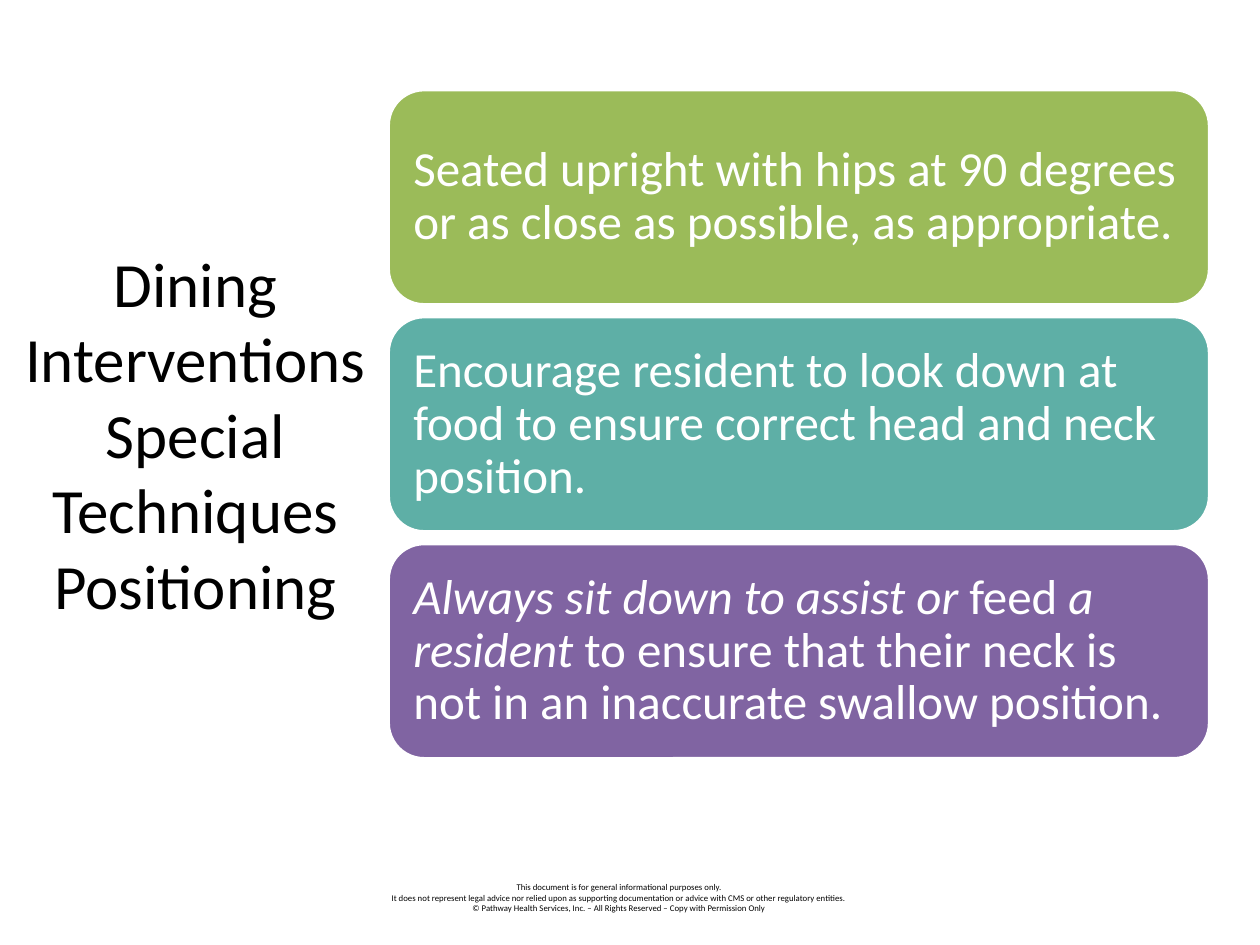
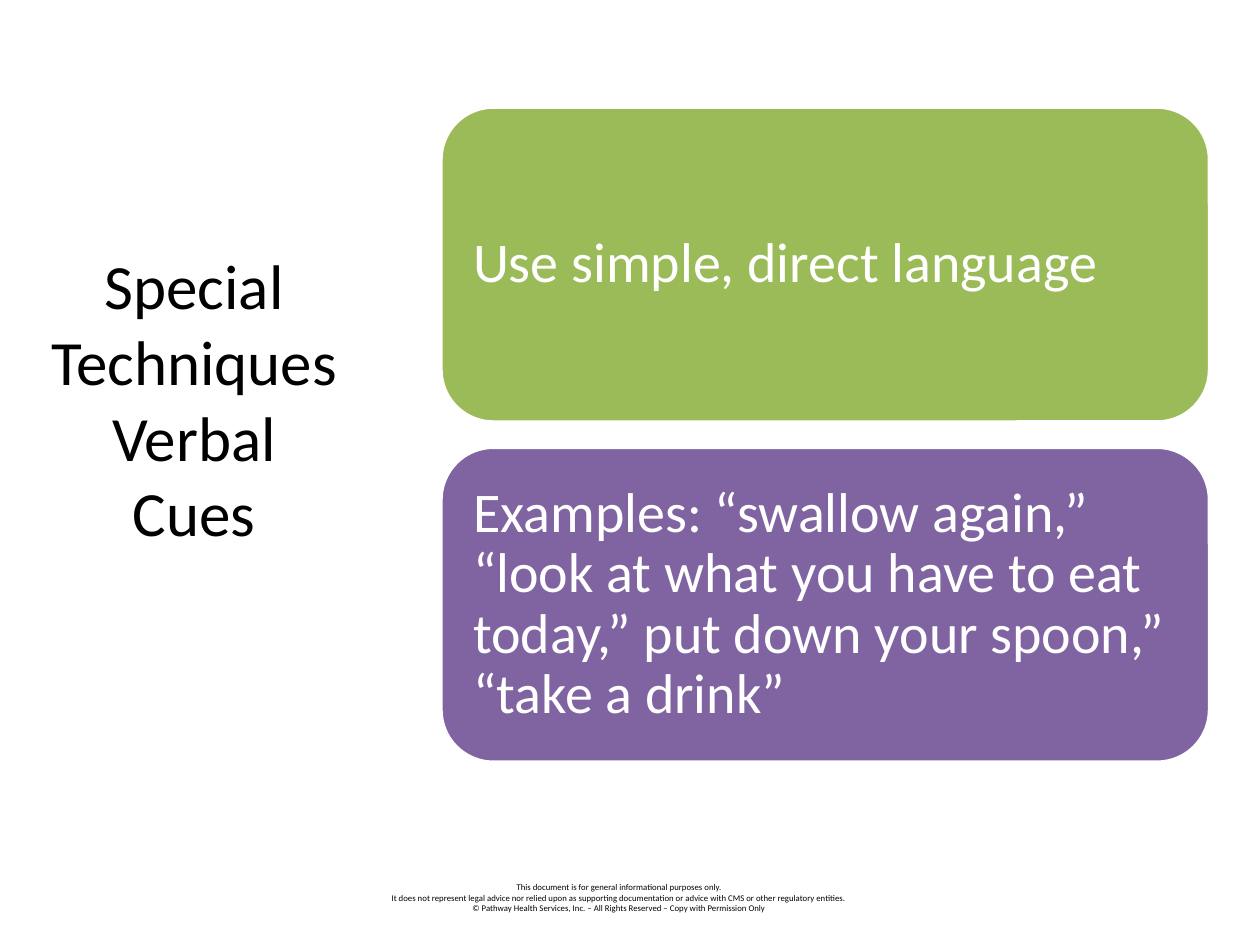
from dataclasses import dataclass
from pptx import Presentation
from pptx.dml.color import RGBColor
from pptx.enum.shapes import MSO_SHAPE
from pptx.enum.text import MSO_ANCHOR, PP_ALIGN
from pptx.util import Pt


@dataclass(frozen=True)
class Theme:
    font: str = "Calibri"
    black: str = "000000"
    white: str = "FFFFFF"
    green: str = "9BBB59"
    teal: str = "5EAFA6"
    purple: str = "8064A2"
    title: int = 36
    footer: int = 5


theme = Theme()

FOOTER = [
    "This document is for general informational purposes only.",
    "It does not represent legal advice nor relied upon as supporting documentation or advice "
    "with CMS or other regulatory entities.",
    "© Pathway Health Services, Inc. – All Rights Reserved – Copy with Permission Only",
]

# Each card is a colour and its runs of (text, italic)
SLIDES = [
    dict(
        title="Dining Interventions Special Techniques Positioning",
        box=(1.4, 128, 220.5, 283),
        left=221.8, top=51.2, width=469.4, height=123, gap=6.7, size=28,
        cards=[
            (theme.green, [("Seated upright with hips at 90 degrees or as close as possible, "
                            "as appropriate.", False)]),
            (theme.teal, [("Encourage resident to look down at food to ensure correct head "
                           "and neck position.", False)]),
            (theme.purple, [("Always sit down to assist or ", True), ("feed", False),
                            (" a resident ", True),
                            ("to ensure that their neck is not in an inaccurate swallow "
                             "position.", False)]),
        ],
    ),
    dict(
        title="Special Techniques Verbal Cues",
        box=(18, 108, 185.8, 283),
        left=252, top=61.2, width=439.2, height=180, gap=14.4, size=32,
        cards=[
            (theme.green, [("Use simple, direct language", False)]),
            (theme.purple, [("Examples: “swallow again,” “look at what you have to eat today,” "
                             "put down your spoon,” “take a drink”", False)]),
        ],
    ),
]


def write(shape, lines, size, color, align, insets, spacing=1.0):
    """Fill a shape with lines, each a list of (text, italic) runs."""
    frame = shape.text_frame
    frame.word_wrap = True
    frame.vertical_anchor = MSO_ANCHOR.MIDDLE
    for side, inset in zip(("left", "top", "right", "bottom"), insets):
        setattr(frame, f"margin_{side}", Pt(inset))
    for i, runs in enumerate(lines):
        para = frame.paragraphs[0] if i == 0 else frame.add_paragraph()
        para.alignment = align
        para.line_spacing = spacing
        for text, italic in runs:
            run = para.add_run()
            run.text = text
            style = dict(name=theme.font, size=Pt(size), italic=italic)
            for key, value in style.items():
                setattr(run.font, key, value)
            run.font.color.rgb = RGBColor.from_string(color)


deck = Presentation()
deck.slide_width, deck.slide_height = Pt(720), Pt(540)

for page in SLIDES:
    slide = deck.slides.add_slide(deck.slide_layouts[6])

    footer = slide.shapes.add_textbox(Pt(198), Pt(500.4), Pt(311.8), Pt(25.4))
    write(footer, [[(line, False)] for line in FOOTER], theme.footer, theme.black,
          PP_ALIGN.CENTER, (7.2, 3.6, 7.2, 3.6))

    # The deep bottom inset lifts the title by half a line
    title = slide.shapes.add_textbox(*map(Pt, page["box"]))
    write(title, [[(page["title"], False)]], theme.title, theme.black,
          PP_ALIGN.CENTER, (8, 3.6, 8, 47.6))

    size = page["size"]
    for row, (color, runs) in enumerate(page["cards"]):
        top = page["top"] + row * (page["height"] + page["gap"])
        card = slide.shapes.add_shape(
            MSO_SHAPE.ROUNDED_RECTANGLE,
            Pt(page["left"]), Pt(top), Pt(page["width"]), Pt(page["height"]))
        card.shadow.inherit = False
        card.fill.solid()
        card.fill.fore_color.rgb = RGBColor.from_string(color)
        card.line.color.rgb = RGBColor.from_string(theme.white)
        card.line.width = Pt(2)
        write(card, [runs], size, theme.white, PP_ALIGN.LEFT, [size * 0.3] * 4, 0.9)

deck.save("out.pptx")
